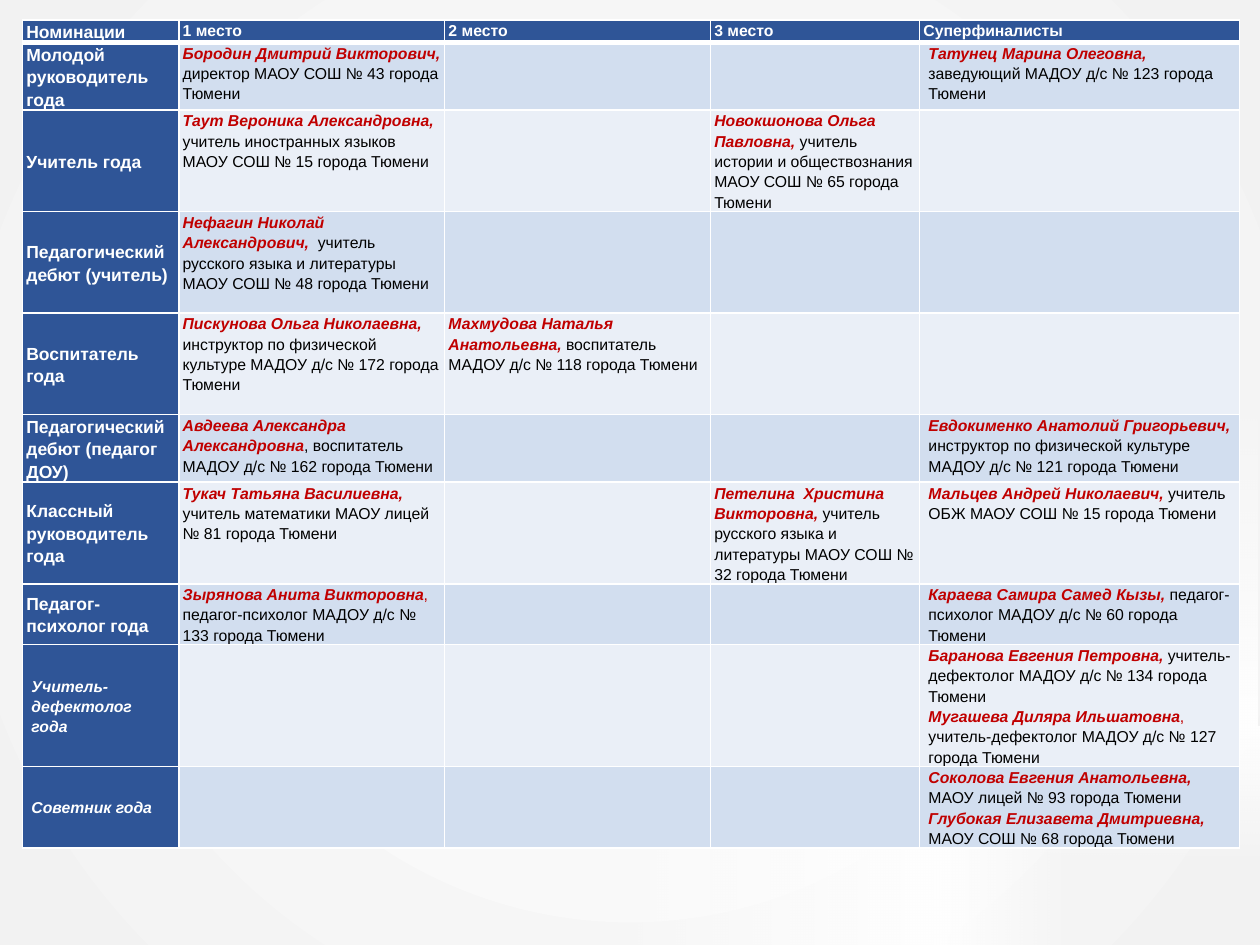
from dataclasses import dataclass

from lxml.etree import SubElement
from pptx import Presentation
from pptx.dml.color import RGBColor
from pptx.enum.shapes import MSO_SHAPE
from pptx.enum.text import MSO_ANCHOR as Anchor
from pptx.oxml import parse_xml
from pptx.oxml.ns import nsdecls, qn
from pptx.util import Inches, Pt


@dataclass(frozen=True)
class Theme:
    font: str = "Arial"
    heading_size: int = 10
    body_size: int = 9
    line_spacing: float = 1.15
    white: str = "FFFFFF"
    edge: str = "F2F2F2"
    black: str = "000000"
    name: str = "C00000"
    heading: str = "2F5597"
    bands: tuple = ("D2DEEF", "EAEFF7")
    thin: int = 1
    thick: int = 3
    narrow: float = 0.03
    wide: float = 0.07


# Table grid: widths in percent of the slide, heights in text lines
COLUMNS = [12.4, 21.1, 21.1, 16.6, 25.4]
LINES = [1.1, 3.33, 5, 5, 5, 3.33, 5, 3, 6, 4]
LINE_HEIGHT = 2.15

HEADER = ["Номинации", "1 место", "2 место", "3 место", "Суперфиналисты"]

# Nomination, then {column: paragraphs}; a paragraph is (name, role)
# or (name, separator, role)
NOMINATIONS = [
    ("Молодой руководитель года", {
        1: [("Бородин Дмитрий Викторович, ", "директор МАОУ СОШ № 43 города Тюмени")],
        4: [("Татунец Марина Олеговна, ", "заведующий МАДОУ д/с № 123 города Тюмени")]}),
    ("Учитель года", {
        1: [("Таут Вероника Александровна, ",
             "учитель иностранных языков МАОУ СОШ № 15 города Тюмени")],
        3: [("Новокшонова Ольга Павловна, ",
             "учитель истории и обществознания МАОУ СОШ № 65 города Тюмени")]}),
    ("Педагогический дебют (учитель)", {
        1: [("Нефагин Николай Александрович,  ",
             "учитель русского языка и литературы МАОУ СОШ № 48 города Тюмени")]}),
    ("Воспитатель года", {
        1: [("Пискунова Ольга Николаевна, ",
             "инструктор по физической культуре МАДОУ д/с № 172 города Тюмени")],
        2: [("Махмудова Наталья Анатольевна, ",
             "воспитатель МАДОУ д/с № 118 города Тюмени")]}),
    ("Педагогический дебют (педагог ДОУ)", {
        1: [("Авдеева Александра Александровна",
             ", воспитатель МАДОУ д/с № 162 города Тюмени")],
        4: [("Евдокименко Анатолий Григорьевич, ",
             "инструктор по физической культуре МАДОУ д/с № 121 города Тюмени")]}),
    ("Классный руководитель года", {
        1: [("Тукач Татьяна Василиевна, ",
             "учитель математики МАОУ лицей № 81 города Тюмени")],
        3: [("Петелина  Христина  Викторовна, ",
             "учитель русского языка и литературы МАОУ СОШ № 32 города Тюмени")],
        4: [("Мальцев Андрей Николаевич, ", "учитель ОБЖ МАОУ СОШ № 15 города Тюмени")]}),
    ("Педагог-психолог года", {
        1: [("Зырянова Анита Викторовна", ", ",
             "педагог-психолог МАДОУ д/с № 133 города Тюмени")],
        4: [("Караева Самира Самед Кызы, ",
             "педагог-психолог МАДОУ д/с № 60 города Тюмени")]}),
    ("Учитель-дефектолог года", {
        4: [("Баранова Евгения Петровна, ",
             "учитель-дефектолог МАДОУ д/с № 134 города Тюмени"),
            ("Мугашева Диляра Ильшатовна", ", ",
             "учитель-дефектолог МАДОУ д/с № 127 города Тюмени")]}),
    ("Советник года", {
        4: [("Соколова Евгения Анатольевна,", ""),
            ("", "МАОУ лицей № 93 города Тюмени"),
            ("Глубокая Елизавета Дмитриевна,", ""),
            ("", "МАОУ СОШ № 68 города Тюмени")]}),
]
ITALIC_NOMINATIONS = {"Учитель-дефектолог года", "Советник года"}

# Background glows: left, top, width, height in percent, then rotation
GLOWS = [
    (71.1, 81.2, 17.2, 14.8, 270),
    (74.2, 76.93, 25.8, 14.8, 0),
    (74, 40.93, 25.8, 36.13, 180),
    (48.3, 64.67, 25.8, 36.13, 90),
]


def add_text(paragraph, text, font, size, color, bold=False, italic=False):
    run = paragraph.add_run()
    run.text = text
    run.font.name = font
    run.font.size = Pt(size)
    run.font.color.rgb = RGBColor.from_string(color)
    run.font.bold = bold
    run.font.italic = italic


class SlideBuilder:
    def __init__(self, presentation, theme):
        self.theme = theme
        self.width = presentation.slide_width
        self.height = presentation.slide_height
        self.slide = presentation.slides.add_slide(presentation.slide_layouts[6])

    def across(self, percent):
        return round(self.width * percent / 100)

    def down(self, percent):
        return round(self.height * percent / 100)

    def gradient_box(self, left, top, width, height, end, direction,
                     rotation=0, end_alpha=100):
        shape = self.slide.shapes.add_shape(
            MSO_SHAPE.RECTANGLE, self.across(left), self.down(top),
            self.across(width), self.down(height))
        shape.rotation = rotation
        shape.shadow.inherit = False
        shape.line.fill.background()
        gradient = parse_xml(
            f'<a:gradFill {nsdecls("a")} rotWithShape="1"><a:gsLst>'
            f'<a:gs pos="0"><a:srgbClr val="{self.theme.white}"/></a:gs>'
            f'<a:gs pos="100000"><a:srgbClr val="{end}">'
            f'<a:alpha val="{end_alpha * 1000}"/></a:srgbClr></a:gs>'
            f'</a:gsLst>{direction}</a:gradFill>')
        shape.element.spPr.find(qn("a:prstGeom")).addnext(gradient)

    def background(self):
        half = 'l="50000" t="50000" r="50000" b="50000"'
        self.gradient_box(0, 0, 100, 100, self.theme.edge,
                          f'<a:path path="circle"><a:fillToRect {half}/></a:path>')
        for *place, rotation in GLOWS:
            self.gradient_box(*place, self.theme.white, '<a:lin ang="5400000" scaled="0"/>',
                              rotation=rotation, end_alpha=0)

    def table(self, left, top, columns, rows):
        frame = self.slide.shapes.add_table(
            len(rows), len(columns), self.across(left), self.down(top),
            self.across(sum(columns)), self.down(sum(rows)))
        for column, width in zip(frame.table.columns, columns):
            column.width = self.across(width)
        for row, height in zip(frame.table.rows, rows):
            row.height = self.down(height)
        return frame.table

    def cell(self, cell, fill, margin, anchor=Anchor.TOP, bottom=None):
        cell.margin_left = cell.margin_right = Inches(margin)
        cell.margin_top = cell.margin_bottom = 0
        cell.vertical_anchor = anchor
        properties = cell._tc.get_or_add_tcPr()
        for side in ("L", "R", "T", "B"):
            weight = bottom if side == "B" and bottom else self.theme.thin
            line = SubElement(properties, qn(f"a:ln{side}"), w=str(Pt(weight)))
            solid = SubElement(line, qn("a:solidFill"))
            SubElement(solid, qn("a:srgbClr"), val=self.theme.white)
        cell.fill.solid()
        cell.fill.fore_color.rgb = RGBColor.from_string(fill)

    def paragraph(self, cell, first):
        frame = cell.text_frame
        paragraph = frame.paragraphs[0] if first else frame.add_paragraph()
        paragraph.line_spacing = self.theme.line_spacing
        return paragraph

    def heading(self, cell, text, size, margin, anchor, italic=False, bottom=None):
        self.cell(cell, self.theme.heading, margin, anchor, bottom)
        add_text(self.paragraph(cell, True), text, self.theme.font, size,
                 self.theme.white, bold=True, italic=italic)

    def winners(self, cell, entries, fill, margin):
        theme = self.theme
        self.cell(cell, fill, margin)
        for index, (name, *separator, role) in enumerate(entries):
            paragraph = self.paragraph(cell, index == 0)
            if name:
                add_text(paragraph, name, theme.font, theme.body_size, theme.name,
                         bold=True, italic=True)
            for mark in separator:
                add_text(paragraph, mark, theme.font, theme.body_size, theme.name)
            if role:
                add_text(paragraph, role, theme.font, theme.body_size, theme.black)


def main():
    presentation = Presentation()
    presentation.slide_width, presentation.slide_height = Inches(10), Inches(7.5)
    theme = Theme()
    builder = SlideBuilder(presentation, theme)
    builder.background()
    table = builder.table(1.8, 2.1, COLUMNS, [count * LINE_HEIGHT for count in LINES])

    # Header row
    for column, text in enumerate(HEADER):
        builder.heading(table.cell(0, column), text,
                        theme.body_size if column else theme.heading_size, theme.narrow,
                        Anchor.TOP if column else Anchor.MIDDLE, bottom=theme.thick)

    # Nominations and their winners
    last = len(COLUMNS) - 1
    for row, (nomination, places) in enumerate(NOMINATIONS, start=1):
        italic = nomination in ITALIC_NOMINATIONS
        builder.heading(table.cell(row, 0), nomination,
                        theme.body_size if italic else theme.heading_size,
                        theme.wide if italic else theme.narrow, Anchor.MIDDLE, italic)
        for column in range(1, len(COLUMNS)):
            builder.winners(table.cell(row, column), places.get(column, []),
                            theme.bands[(row - 1) % 2],
                            theme.wide if column == last else theme.narrow)

    presentation.save("out.pptx")


if __name__ == "__main__":
    main()
